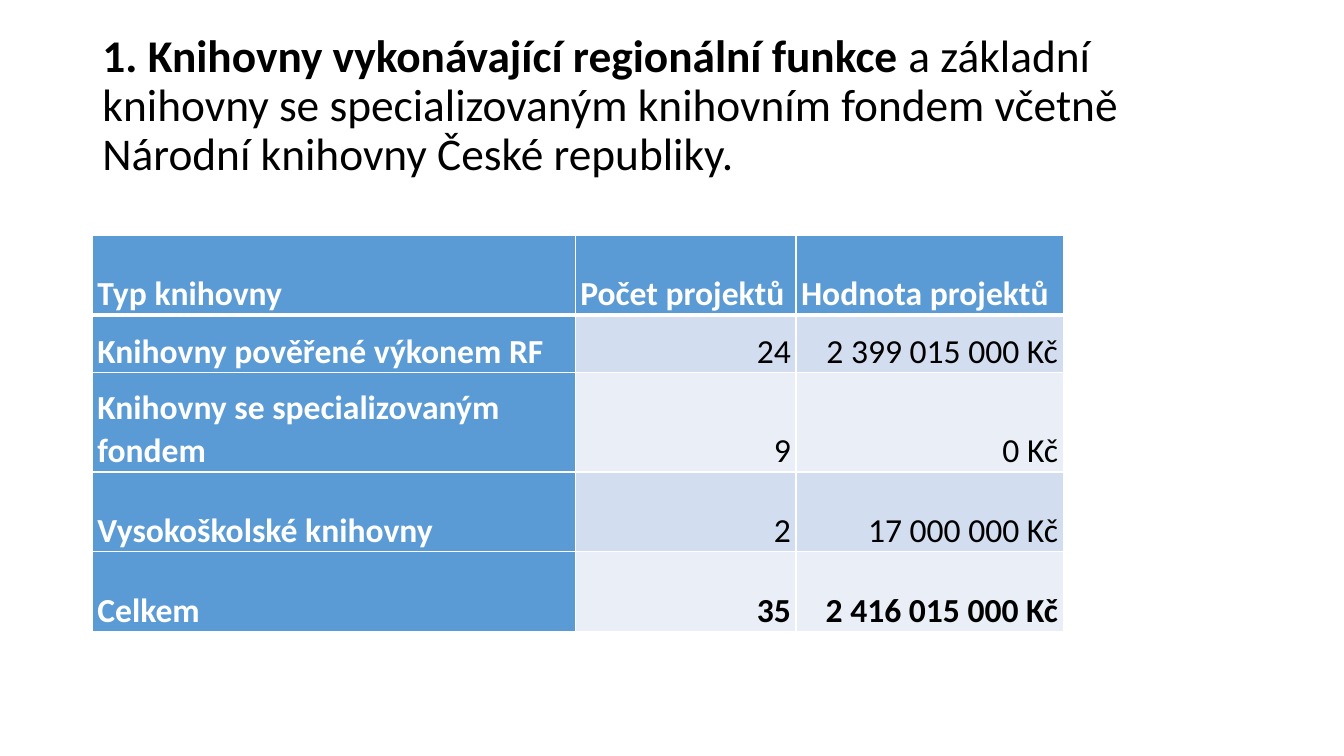
from dataclasses import dataclass

from lxml.etree import SubElement
from pptx import Presentation
from pptx.dml.color import RGBColor
from pptx.enum.text import MSO_ANCHOR, MSO_AUTO_SIZE, PP_ALIGN
from pptx.oxml.ns import qn
from pptx.util import Pt

FONT = "Calibri"
COLORS = {"text": "000000", "white": "FFFFFF", "accent": "5B9BD5",
          "band_dark": "D2DEEF", "band_light": "EAEFF7"}
COL_WIDTHS = (344.9, 157.7, 190.8)
HEADERS = ("Typ knihovny", "Počet projektů", "Hodnota projektů")


@dataclass
class LibraryRow:
    texts: tuple[str, str, str]
    height: float
    band: str = "accent"
    total: bool = False


ROWS = (
    LibraryRow(HEADERS, 56.9),
    LibraryRow(("Knihovny pověřené výkonem RF", "24", "2 399 015 000 Kč"), 41, "band_dark"),
    LibraryRow(("Knihovny se specializovaným fondem", "9", "0 Kč"), 71.3, "band_light"),
    LibraryRow(("Vysokoškolské knihovny", "2", "17 000 000 Kč"), 56.9, "band_dark"),
    LibraryRow(("Celkem", "35", "2 416 015 000 Kč"), 56.9, "band_light", True),
)


def rgb(name: str) -> RGBColor:
    return RGBColor.from_string(COLORS[name])


def add_run(p, text: str, size: float, color: str, bold: bool) -> None:
    r = p.add_run()
    r.text = text
    r.font.name = FONT
    r.font.size = Pt(size)
    r.font.bold = bold
    r.font.color.rgb = rgb(color)


def set_borders(cell, widths: dict[str, float]) -> None:
    tcPr = cell._tc.get_or_add_tcPr()
    for side, width in widths.items():
        ln = SubElement(tcPr, qn(f"a:ln{side}"), w=str(Pt(width)))
        fill = SubElement(ln, qn("a:solidFill"))
        SubElement(fill, qn("a:srgbClr"), val=COLORS["white"])


def fill_cell(cell, row: LibraryRow, row_no: int, col_no: int) -> None:
    is_header = row_no == 0
    is_label = is_header or col_no == 0
    set_borders(cell, {"L": 1, "R": 1, "T": 3 if row_no == 1 else 1,
                       "B": 3 if is_header else 1})
    cell.fill.solid()
    cell.fill.fore_color.rgb = rgb("accent" if is_label else row.band)
    cell.vertical_anchor = MSO_ANCHOR.BOTTOM
    cell.margin_left = cell.margin_right = Pt(3.6)
    cell.margin_top = cell.margin_bottom = Pt(0)
    p = cell.text_frame.paragraphs[0]
    p.alignment = PP_ALIGN.LEFT if is_label else PP_ALIGN.RIGHT
    p.line_spacing = 1.07
    add_run(p, row.texts[col_no], 24, "white" if is_label else "text", is_label or row.total)


def add_title(s) -> None:
    sp = s.shapes.title
    sp.left, sp.top, sp.width, sp.height = Pt(66), Pt(28.8), Pt(828), Pt(104.4)
    tf = sp.text_frame
    tf.word_wrap = True
    tf.auto_size = MSO_AUTO_SIZE.NONE
    tf.vertical_anchor = MSO_ANCHOR.MIDDLE
    tf.margin_top, tf.margin_bottom = Pt(0), Pt(9)
    p = tf.paragraphs[0]
    p.alignment = PP_ALIGN.LEFT
    p.line_spacing = 0.9
    add_run(p, "1. Knihovny vykonávající regionální funkce ", 32.4, "text", True)
    add_run(p, "a základní knihovny se specializovaným knihovním fondem včetně "
               "Národní knihovny České republiky.", 32.4, "text", False)


def add_library_table(s) -> None:
    height = sum(row.height for row in ROWS)
    table = s.shapes.add_table(len(ROWS), len(COL_WIDTHS), Pt(66), Pt(168),
                               Pt(sum(COL_WIDTHS)), Pt(height)).table
    table.first_col = True
    for col, width in zip(table.columns, COL_WIDTHS):
        col.width = Pt(width)
    for row_no, row in enumerate(ROWS):
        table.rows[row_no].height = Pt(row.height)
        for col_no in range(len(COL_WIDTHS)):
            fill_cell(table.cell(row_no, col_no), row, row_no, col_no)


def main() -> None:
    prs = Presentation()
    prs.slide_width, prs.slide_height = Pt(960), Pt(540)
    s = prs.slides.add_slide(prs.slide_layouts[5])
    add_title(s)
    add_library_table(s)
    prs.save("out.pptx")


if __name__ == "__main__":
    main()
